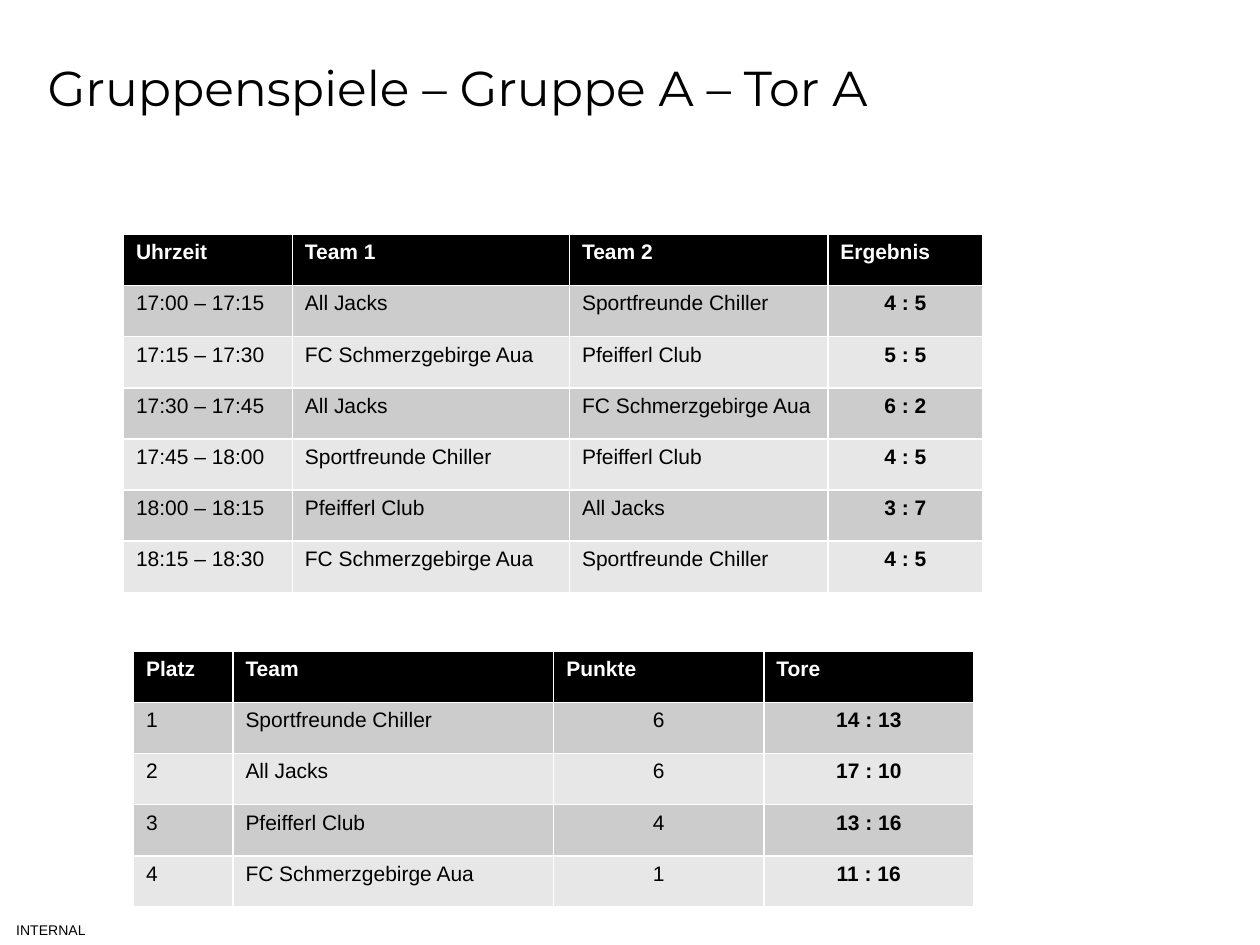
from pptx import Presentation
from pptx.dml.color import RGBColor
from pptx.enum.text import MSO_ANCHOR, PP_ALIGN
from pptx.util import Inches, Pt

LEFT, CENTER = PP_ALIGN.LEFT, PP_ALIGN.CENTER
MIDDLE = MSO_ANCHOR.MIDDLE

TITLE = "Gruppenspiele – Gruppe A – Tor A"
FOOTER = "INTERNAL"
JACKS, CHILLER = "All Jacks", "Sportfreunde Chiller"
AUA, CLUB = "FC Schmerzgebirge Aua", "Pfeifferl Club"

MATCHES = {
    "box": (9.8, 24.8, 68.2, 37.9),
    "cols": (134, 220, 205, 123),
    "aligns": (LEFT, LEFT, LEFT, CENTER),
    "rows": [
        ("Uhrzeit", "Team 1", "Team 2", "Ergebnis"),
        ("17:00 – 17:15", JACKS, CHILLER, "4 : 5"),
        ("17:15 – 17:30", AUA, CLUB, "5 : 5"),
        ("17:30 – 17:45", JACKS, AUA, "6 : 2"),
        ("17:45 – 18:00", CHILLER, CLUB, "4 : 5"),
        ("18:00 – 18:15", CLUB, JACKS, "3 : 7"),
        ("18:15 – 18:30", AUA, CHILLER, "4 : 5"),
    ],
}
STANDINGS = {
    "box": (10.6, 68.9, 66.7, 27.1),
    "cols": (79, 255, 167, 167),
    "aligns": (LEFT, LEFT, CENTER, CENTER),
    "rows": [
        ("Platz", "Team", "Punkte", "Tore"),
        ("1", CHILLER, "6", "14 : 13"),
        ("2", JACKS, "6", "17 : 10"),
        ("3", CLUB, "4", "13 : 16"),
        ("4", AUA, "1", "11 : 16"),
    ],
}

THEME = {
    "black": "000000", "white": "FFFFFF",
    "bands": ("CCCCCC", "E7E7E7"),
    "head_font": "Montserrat", "body_font": "Arial",
    "title": 28, "body": 12, "footer": 8,
}

prs = Presentation()
prs.slide_width, prs.slide_height = Inches(10), Inches(7.5)
slide = prs.slides.add_slide(prs.slide_layouts[6])


def place(x, y, w, h):
    sw, sh = prs.slide_width, prs.slide_height
    return [round(v * side / 100) for v, side in ((x, sw), (y, sh), (w, sw), (h, sh))]


def write(tf, text, size=THEME["body"], font=THEME["body_font"],
          color=THEME["black"], bold=False, align=LEFT):
    p = tf.paragraphs[0]
    p.alignment = align
    r = p.add_run()
    r.text = text
    r.font.size, r.font.name, r.font.bold = Pt(size), font, bold
    r.font.color.rgb = RGBColor.from_string(color)


def add_text(box, text, margin=None, **fmt):
    tf = slide.shapes.add_textbox(*place(*box)).text_frame
    tf.word_wrap = True
    tf.vertical_anchor = MIDDLE
    if margin is not None:
        tf.margin_left = tf.margin_right = tf.margin_top = tf.margin_bottom = margin
    write(tf, text, **fmt)


def add_grid(box, cols, aligns, rows):
    x, y, w, h = place(*box)
    table = slide.shapes.add_table(len(rows), len(cols), x, y, w, h).table
    table.horz_banding = False
    for col, share in zip(table.columns, cols):
        col.width = round(w * share / sum(cols))
    for i, row in enumerate(rows):
        head = i == 0
        fill = THEME["black"] if head else THEME["bands"][(i - 1) % 2]
        for j, text in enumerate(row):
            cell = table.cell(i, j)
            cell.fill.solid()
            cell.fill.fore_color.rgb = RGBColor.from_string(fill)
            write(cell.text_frame, text,
                  color=THEME["white" if head else "black"],
                  bold=head or j == len(row) - 1,
                  align=LEFT if head else aligns[j])


add_text((0, 96.8, 8.1, 3.2), FOOTER, margin=0, size=THEME["footer"], align=CENTER)
add_text((2.8, 0.1, 78.7, 18.3), TITLE, size=THEME["title"], font=THEME["head_font"])
for grid in (MATCHES, STANDINGS):
    add_grid(**grid)

prs.save("out.pptx")
